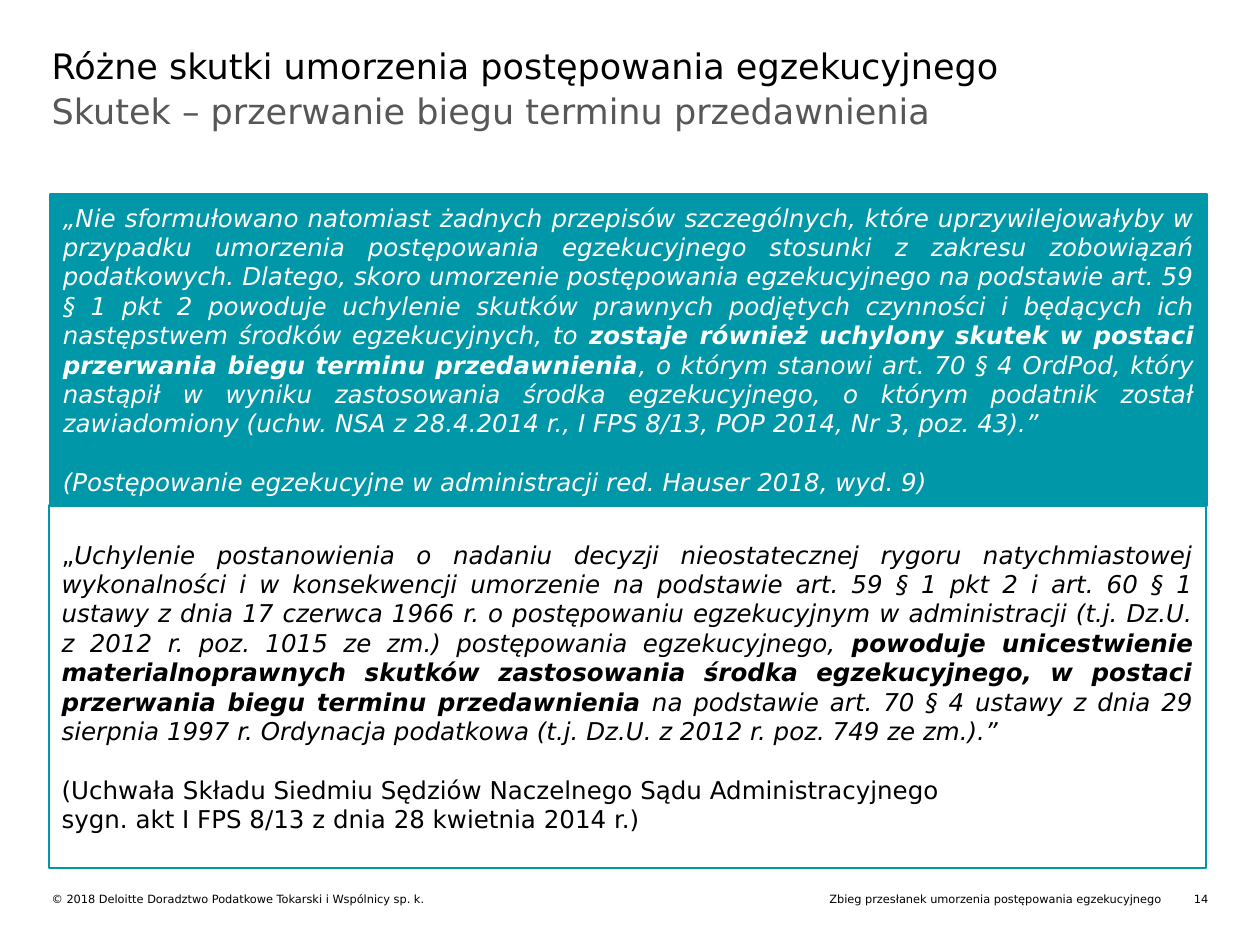
import pptx
import pptx.util
import pptx.dml.color
import pptx.enum.shapes
import pptx.enum.text

Inches = pptx.util.Inches
Pt = pptx.util.Pt
RGBColor = pptx.dml.color.RGBColor
ALIGN = pptx.enum.text.PP_ALIGN
ANCHOR = pptx.enum.text.MSO_ANCHOR

TEAL = RGBColor(0x00, 0x97, 0xA9)
GREY = RGBColor(0x57, 0x57, 0x57)
BLACK = RGBColor(0x00, 0x00, 0x00)
WHITE = RGBColor(0xFF, 0xFF, 0xFF)


class Deck:
    font = "DejaVu Sans"
    heading_size = 20
    quote_size = 14
    footer_size = 6.5
    line_gap = 16.8

    def __init__(self):
        self.prs = pptx.Presentation()
        self.prs.slide_width = Inches(10)
        self.prs.slide_height = Inches(7.5)
        self.s = self.prs.slides.add_slide(self.prs.slide_layouts[5])

    def frame(self, sp, inset, anchor):
        tf = sp.text_frame
        tf.word_wrap = True
        tf.auto_size = pptx.enum.text.MSO_AUTO_SIZE.NONE
        tf.margin_left = tf.margin_right = Inches(inset)
        tf.margin_top = tf.margin_bottom = Inches(inset)
        tf.vertical_anchor = anchor
        return tf

    def style(self, p, size, color, align):
        p.alignment = align
        p.font.name = self.font
        p.font.size = Pt(size)
        p.font.color.rgb = color

    def line(self, sp, text, size, color, align):
        p = self.frame(sp, 0, ANCHOR.TOP).paragraphs[0]
        p.text = text
        self.style(p, size, color, align)

    def title(self, text, x, y, w, h):
        sp = self.s.shapes.title
        sp.left, sp.top, sp.width, sp.height = map(Inches, (x, y, w, h))
        self.line(sp, text, self.heading_size, BLACK, ALIGN.LEFT)

    def text(self, text, x, y, w, h, size, color=BLACK, align=ALIGN.LEFT):
        sp = self.s.shapes.add_textbox(*map(Inches, (x, y, w, h)))
        self.line(sp, text, size, color, align)

    def footer(self, text, x, w, align=ALIGN.LEFT):
        self.text(text, x, 7.08, w, 0.11, self.footer_size, align=align)

    def quote(self, runs, sources, x, y, w, h, color, fill=None,
              source_align=ALIGN.LEFT, source_italic=False):
        sp = self.s.shapes.add_shape(
            pptx.enum.shapes.MSO_SHAPE.FLOWCHART_PROCESS,
            *map(Inches, (x, y, w, h)))
        sp.shadow.inherit = False
        if fill is None:
            sp.fill.background()
        else:
            sp.fill.solid()
            sp.fill.fore_color.rgb = fill
        sp.line.color.rgb = TEAL
        sp.line.width = Pt(1.5)
        tf = self.frame(sp, 0.1, ANCHOR.MIDDLE)
        p = tf.paragraphs[0]
        self.style(p, self.quote_size, color, ALIGN.JUSTIFY)
        for text, italic, bold in runs:
            r = p.add_run()
            r.text = text
            r.font.italic = italic
            r.font.bold = bold
        for i, source in enumerate(sources):
            p = tf.add_paragraph()
            p.text = source
            self.style(p, self.quote_size, color, source_align)
            p.font.italic = source_italic
            if i == 0:
                p.space_before = Pt(self.line_gap)


def main():
    deck = Deck()
    deck.title("Różne skutki umorzenia postępowania egzekucyjnego",
               0.41, 0.35, 9.19, 0.76)
    deck.text("Skutek – przerwanie biegu terminu przedawnienia",
              0.41, 0.71, 9.19, 0.83, deck.heading_size, GREY)
    deck.quote(
        [("„", False, False),
         ("Uchylenie postanowienia o nadaniu decyzji nieostatecznej rygoru "
          "natychmiastowej wykonalności i w konsekwencji umorzenie na podstawie "
          "art. 59 § 1 pkt 2 i art. 60 § 1 ustawy z dnia 17 czerwca 1966 r. "
          "o postępowaniu egzekucyjnym w administracji (t.j. Dz.U. z 2012 r. "
          "poz. 1015 ze zm.) postępowania egzekucyjnego, ", True, False),
         ("powoduje unicestwienie materialnoprawnych skutków zastosowania "
          "środka egzekucyjnego, w postaci przerwania biegu terminu "
          "przedawnienia", True, True),
         (" na podstawie art. 70 § 4 ustawy z dnia 29 sierpnia 1997 r. "
          "Ordynacja podatkowa (t.j. Dz.U. z 2012 r. poz. 749 ze zm.).”",
          True, False)],
        ["(Uchwała Składu Siedmiu Sędziów Naczelnego Sądu Administracyjnego",
         "sygn. akt I FPS 8/13 z dnia 28 kwietnia 2014 r.)"],
        0.39, 4.01, 9.18, 2.88, BLACK)
    deck.quote(
        [("„Nie sformułowano natomiast żadnych przepisów szczególnych, które "
          "uprzywilejowałyby w przypadku umorzenia postępowania egzekucyjnego "
          "stosunki z zakresu zobowiązań podatkowych. Dlatego, skoro umorzenie "
          "postępowania egzekucyjnego na podstawie art. 59 § 1 pkt 2 powoduje "
          "uchylenie skutków prawnych podjętych czynności i będących ich "
          "następstwem środków egzekucyjnych, to ", True, False),
         ("zostaje również uchylony skutek w postaci przerwania biegu terminu "
          "przedawnienia", True, True),
         (", o którym stanowi art. 70 § 4 OrdPod, który nastąpił w wyniku "
          "zastosowania środka egzekucyjnego, o którym podatnik został "
          "zawiadomiony (uchw. NSA z 28.4.2014 r., I FPS 8/13, POP 2014, Nr 3, "
          "poz. 43).”", True, False)],
        ["(Postępowanie egzekucyjne w administracji red. Hauser 2018, wyd. 9)"],
        0.4, 1.54, 9.18, 2.47, WHITE, TEAL, ALIGN.JUSTIFY, True)
    deck.footer("© 2018 Deloitte Doradztwo Podatkowe Tokarski i Wspólnicy sp. k.",
                0.41, 4.39)
    deck.footer("Zbieg przesłanek umorzenia postępowania egzekucyjnego",
                5.2, 4.02, ALIGN.RIGHT)
    deck.footer("14", 9.34, 0.25, ALIGN.RIGHT)
    deck.prs.save("out.pptx")


if __name__ == "__main__":
    main()
